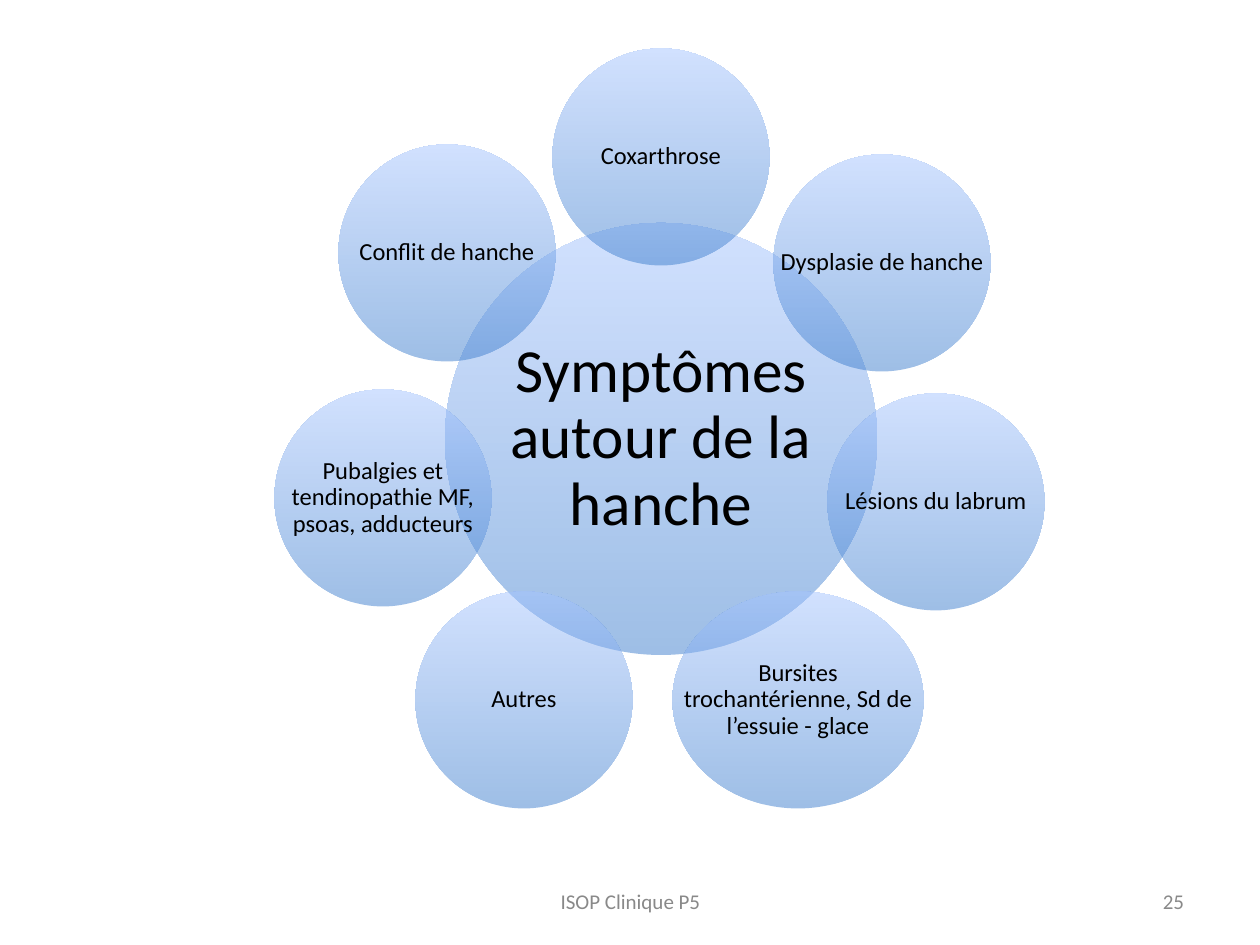
import pptx
import pptx.dml.color
import pptx.enum.shapes
import pptx.enum.text
import pptx.oxml
import pptx.oxml.ns
import pptx.util

# Content: text, centre x, centre y, width, height, font size, inset (px)
HUB = ("Symptômes autour de la hanche", 661, 439, 432, 432, 35, 6)
PETALS = [
    ("Coxarthrose", 661, 157, 217),
    ("Dysplasie de hanche", 882, 263, 217),
    ("Lésions du labrum", 936, 502, 217),
    ("Conflit de hanche", 447, 253, 217),
    ("Bursites trochantérienne, Sd de l’essuie - glace", 798, 700, 251),
    ("Pubalgies et tendinopathie MF, psoas, adducteurs", 383, 498, 217),
    ("Autres", 524, 700, 217),
]
PETAL_HEIGHT, PETAL_FONT, PETAL_INSET = 217, 14, 3
FOOTER = ("ISOP Clinique P5", 431, 876, 399, 50)
PAGE_NUMBER = ("25", 903, 876, 294, 50)

COLORS = {"bottom": "3F7FCE", "top": "A4C4FF", "text": "000000", "footer": "898989"}
OPACITY = 50
FONT = "Calibri"
EMU_PER_PX = 914400 / 126
ALIGN = pptx.enum.text.PP_ALIGN


def px(length):
    return pptx.util.Emu(round(length * EMU_PER_PX))


def rgb(name):
    return pptx.dml.color.RGBColor.from_string(COLORS[name])


def add_text(shapes, text, box, size, color, align, insets, spacing=None):
    text_box = shapes.add_textbox(*map(px, box))
    frame = text_box.text_frame
    frame.word_wrap = True
    frame.vertical_anchor = pptx.enum.text.MSO_ANCHOR.MIDDLE
    frame.margin_left = frame.margin_right = px(insets[0])
    frame.margin_top = frame.margin_bottom = px(insets[1])
    paragraph = frame.paragraphs[0]
    paragraph.text = text
    paragraph.alignment = align
    paragraph.line_spacing = spacing
    paragraph.font.name = FONT
    paragraph.font.size = pptx.util.Pt(size)
    paragraph.font.color.rgb = rgb(color)


def fill_translucent_gradient(shape):
    shape.fill.gradient()
    shape.fill.gradient_angle = 90
    for stop, name in zip(shape.fill.gradient_stops, ("bottom", "top")):
        stop.color.rgb = rgb(name)
    for color in shape.element.spPr.iter(pptx.oxml.ns.qn("a:srgbClr")):
        alpha = pptx.oxml.parse_xml(
            f'<a:alpha {pptx.oxml.ns.nsdecls("a")} val="{OPACITY * 1000}"/>')
        color.append(alpha)


def add_circle(shapes, text, center_x, center_y, width, height, size, inset):
    box = (center_x - width / 2, center_y - height / 2, width, height)
    circle = shapes.add_shape(pptx.enum.shapes.MSO_SHAPE.OVAL, *map(px, box))
    circle.shadow.inherit = False
    circle.line.fill.background()
    fill_translucent_gradient(circle)
    # The label spans the full width of the circle, so it has its own box
    add_text(shapes, text, box, size, "text", ALIGN.CENTER, (inset, inset), 0.9)


def main():
    presentation = pptx.Presentation()
    presentation.slide_width = px(1260)
    presentation.slide_height = px(945)
    slide = presentation.slides.add_slide(presentation.slide_layouts[6])

    # Central circle and surrounding petals
    diagram = slide.shapes.add_group_shape()
    add_circle(diagram.shapes, *HUB)
    for text, center_x, center_y, width in PETALS:
        add_circle(diagram.shapes, text, center_x, center_y, width,
                   PETAL_HEIGHT, PETAL_FONT, PETAL_INSET)

    # Footer and page number
    for (text, *box), align in ((FOOTER, ALIGN.CENTER), (PAGE_NUMBER, ALIGN.RIGHT)):
        add_text(slide.shapes, text, box, 12, "footer", align, (13, 6))

    presentation.save("out.pptx")


if __name__ == "__main__":
    main()
